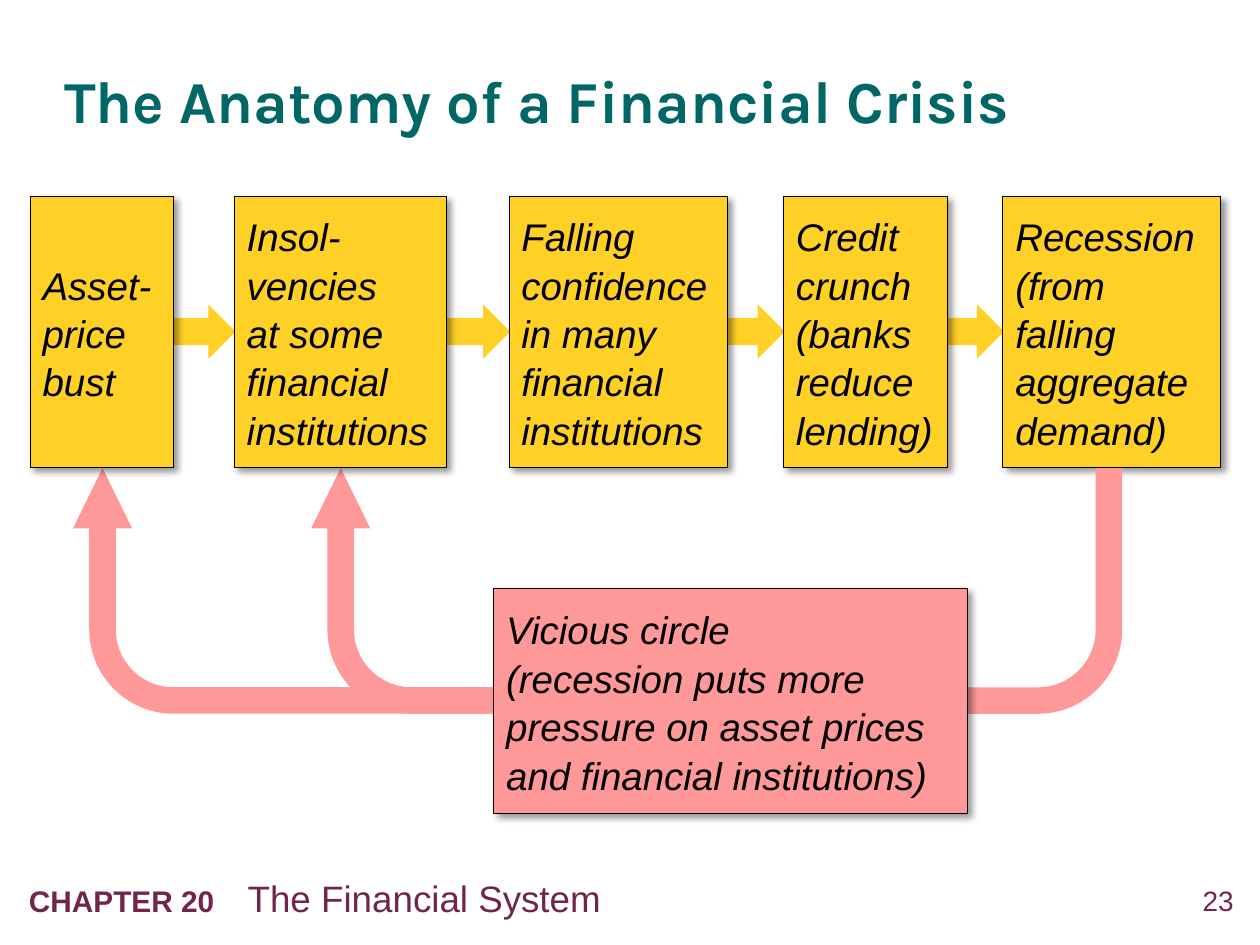
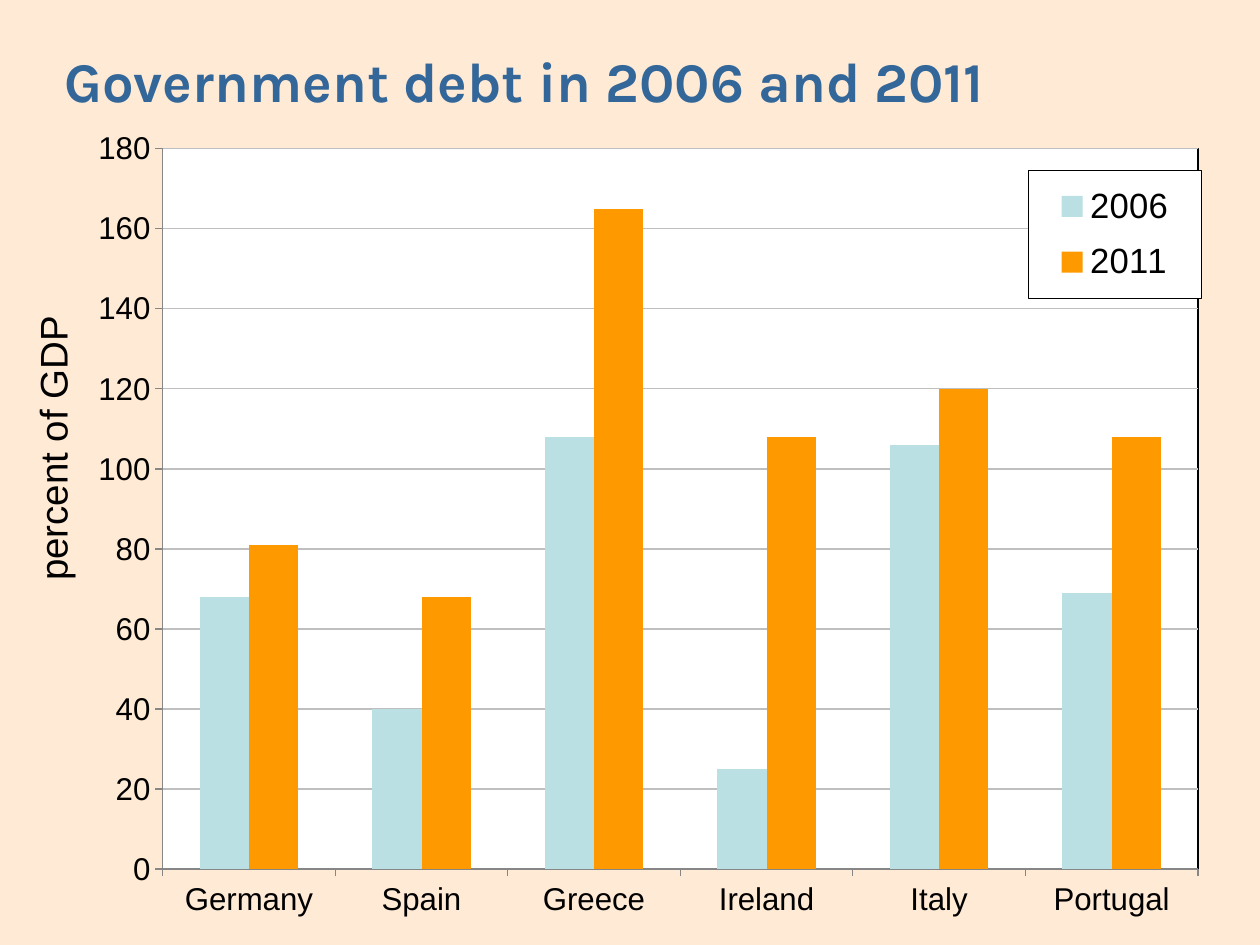
from pptx import Presentation
from pptx.chart.data import CategoryChartData
from pptx.dml.color import RGBColor
from pptx.enum.chart import XL_CHART_TYPE as ChartType, XL_LEGEND_POSITION as LegendPos
from pptx.enum.chart import XL_TICK_MARK as TickMark
from pptx.enum.shapes import MSO_SHAPE as Preset
from pptx.enum.text import MSO_ANCHOR as Anchor, PP_ALIGN as Align
from pptx.oxml import parse_xml
from pptx.oxml.ns import nsdecls, qn
from pptx.util import Pt

COLORS = {
    "white": "FFFFFF", "black": "000000", "peach": "FFEAD5",
    "teal": "006666", "blue": "336699", "plum": "71254B",
    "yellow": "FFD025", "pink": "FF9999",
    "debt_2006": "BBE0E3", "debt_2011": "FF9900",
    "grid": "BFBFBF", "axis": "868686",
}
BODY_FONT, TITLE_FONT = "Arial", "Karla"
STAGE_TOP, STAGE_HEIGHT = 112.3, 154.8
STAGES = [
    ("Asset-price bust", 17.3, 82.1),
    ("Insol-vencies\vat some financial institutions", 133.9, 121),
    ("Falling confidence in many financial institutions", 290.9, 124.6),
    ("Credit crunch (banks reduce lending)", 447.8, 93.6),
    ("Recession (from falling aggregate demand)", 573.1, 124.6),
]
STEP_WIDTH, STEP_HEIGHT = 47.5, 31
COUNTRIES = ["Germany", "Spain", "Greece", "Ireland", "Italy", "Portugal"]
DEBT = {"2006": [68, 40, 108, 25, 106, 69], "2011": [81, 68, 165, 108, 120, 108]}


def rgb(color):
    """Return the named colour."""
    return RGBColor.from_string(COLORS[color])


def style_font(font, size, color="black", name=BODY_FONT, bold=False, italic=False):
    """Format a run or chart font."""
    font.size, font.name = Pt(size), name
    font.bold, font.italic = bold, italic
    font.color.rgb = rgb(color)


def add_slide(deck, background):
    """Add a blank slide with a plain background."""
    slide = deck.slides.add_slide(deck.slide_layouts[6])
    slide.background.fill.solid()
    slide.background.fill.fore_color.rgb = rgb(background)
    return slide


def add_label(slide, text, box, size, color, inset=True, **font):
    """Add a one-paragraph text box and return its frame."""
    frame = slide.shapes.add_textbox(*map(Pt, box)).text_frame
    frame.word_wrap = True
    if not inset:
        frame.margin_left = frame.margin_right = 0
        frame.margin_top = frame.margin_bottom = 0
    frame.text = text
    style_font(frame.paragraphs[0].runs[0].font, size, color, **font)
    return frame


def add_title(slide, text, top, height, size, color):
    """Add the slide title."""
    frame = add_label(slide, text, (36.7, top, 649.4, height), size, color,
                      inset=False, name=TITLE_FONT, bold=True)
    frame.vertical_anchor = Anchor.MIDDLE
    frame.paragraphs[0].line_spacing = 1.05


def add_footer(slide, chapter, topic, number):
    """Add the page number and the chapter line."""
    page = add_label(slide, number, (665.3, 504.7, 39.6, 23), 16, "plum", inset=False)
    page.paragraphs[0].alignment = Align.RIGHT
    footer = add_label(slide, f"{chapter}\t", (9.4, 496.8, 589, 32.4), 17, "plum", bold=True)
    line = footer.paragraphs[0]
    topic_run = line.add_run()
    topic_run.text = topic
    style_font(topic_run.font, 21, "plum")
    line._p.get_or_add_pPr().append(parse_xml(
        f'<a:tabLst {nsdecls("a")}><a:tab pos="{Pt(125)}" algn="l"/></a:tabLst>'))


def add_flat_shape(slide, preset, box, color):
    """Add a filled shape without outline or shadow."""
    shape = slide.shapes.add_shape(preset, *map(Pt, box))
    shape.shadow.inherit = False
    shape.fill.solid()
    shape.fill.fore_color.rgb = rgb(color)
    shape.line.fill.background()
    return shape


def add_box(slide, text, box, color):
    """Add an outlined box with a soft shadow and italic text."""
    panel = add_flat_shape(slide, Preset.RECTANGLE, box, color)
    panel.line.color.rgb = rgb("black")
    panel.line.width = Pt(0.5)
    panel.element.spPr.find(qn("a:effectLst")).append(parse_xml(
        f'<a:outerShdw {nsdecls("a")} blurRad="{Pt(4)}" dist="{Pt(3)}" dir="2700000" '
        f'algn="tl" rotWithShape="0"><a:srgbClr val="{COLORS["black"]}">'
        '<a:alpha val="40000"/></a:srgbClr></a:outerShdw>'))
    frame = panel.text_frame
    frame.word_wrap = True
    frame.vertical_anchor = Anchor.MIDDLE
    frame.text = text
    line = frame.paragraphs[0]
    line.alignment, line.line_spacing = Align.LEFT, 1.05
    for run in line.runs:
        style_font(run.font, 22, italic=True)


def add_feedback_arrow(slide, left, top, length, head=0.245, flipped=False):
    """Add a bent band that turns upward, with an optional head."""
    arrow = add_flat_shape(slide, Preset.BENT_ARROW, (left, top, 140.4, length), "pink")
    for index, value in enumerate((0.108, 0.12, head, 0.343)):
        arrow.adjustments[index] = value
    arrow.rotation = 270
    if flipped:
        arrow.element.spPr.find(qn("a:xfrm")).set("flipV", "1")


def manual_layout(x, y, width, height, target=""):
    """Return a chart layout in fractions of the chart area."""
    modes = "".join(f'<c:{side}Mode val="edge"/>' for side in "xy")
    sizes = "".join(f'<c:{key} val="{value}"/>'
                    for key, value in zip("xywh", (x, y, width, height)))
    return parse_xml(f'<c:layout {nsdecls("c")}><c:manualLayout>{target}{modes}{sizes}'
                     '</c:manualLayout></c:layout>')


def chart_frame():
    """Return white fill and a thin black outline for a chart part."""
    return parse_xml(
        f'<c:spPr {nsdecls("c", "a")}>'
        f'<a:solidFill><a:srgbClr val="{COLORS["white"]}"/></a:solidFill>'
        f'<a:ln w="{Pt(0.75)}"><a:solidFill><a:srgbClr val="{COLORS["black"]}"/>'
        '</a:solidFill></a:ln></c:spPr>')


def style_axis(axis):
    """Format the labels, ticks and line of an axis."""
    style_font(axis.tick_labels.font, 18)
    axis.major_tick_mark, axis.minor_tick_mark = TickMark.OUTSIDE, TickMark.NONE
    axis.format.line.color.rgb = rgb("axis")
    axis.format.line.width = Pt(0.75)


def frame_plot(chart):
    """Place and frame the plot area."""
    plot_area = next(chart.element.iter(qn("c:plotArea")))
    for layout in plot_area.findall(qn("c:layout")):
        plot_area.remove(layout)
    plot_area.insert(0, manual_layout(0.047, 0.022, 0.917, 0.902,
                                      '<c:layoutTarget val="inner"/>'))
    plot_area.append(chart_frame())


def add_legend(chart):
    """Add a framed legend over the upper right of the plot."""
    chart.has_legend = True
    chart.legend.position = LegendPos.RIGHT
    chart.legend.include_in_layout = False
    style_font(chart.legend.font, 20)
    legend = next(chart.element.iter(qn("c:legend")))
    for layout in legend.findall(qn("c:layout")):
        legend.remove(layout)
    overlay = legend.find(qn("c:overlay"))
    overlay.addprevious(manual_layout(0.814, 0.049, 0.153, 0.16))
    overlay.addnext(chart_frame())


def add_debt_chart(slide):
    """Add the clustered columns of government debt."""
    data = CategoryChartData(number_format="0")
    data.categories = COUNTRIES
    for year, shares in DEBT.items():
        data.add_series(year, shares)
    chart = slide.shapes.add_chart(ChartType.COLUMN_CLUSTERED, Pt(56.2), Pt(74.9),
                                   Pt(651.6), Pt(456.5), data).chart
    chart.has_title = False
    style_font(chart.font, 10)
    columns = chart.plots[0]
    columns.gap_width, columns.overlap, columns.vary_by_categories = 150, 0, False
    for series in columns.series:
        series.format.fill.solid()
        series.format.fill.fore_color.rgb = rgb(f"debt_{series.name}")
    style_axis(chart.category_axis)
    percent = chart.value_axis
    style_axis(percent)
    percent.minimum_scale, percent.maximum_scale, percent.major_unit = 0, 180, 20
    percent.tick_labels.number_format = "0"
    percent.tick_labels.number_format_is_linked = False
    percent.major_gridlines.format.line.color.rgb = rgb("grid")
    percent.major_gridlines.format.line.width = Pt(0.75)
    frame_plot(chart)
    add_legend(chart)


def build_crisis_slide(deck):
    """Build the chain of events in a financial crisis."""
    slide = add_slide(deck, "white")
    add_footer(slide, "CHAPTER 20", "The Financial System", "23")
    add_title(slide, "The Anatomy of a Financial Crisis", 18.7, 74.2, 34, "teal")
    for left in (104.4, 240.5):
        add_feedback_arrow(slide, left, 204.8, 265.7)
    for _, next_left, _ in STAGES[1:]:
        add_flat_shape(slide, Preset.RIGHT_ARROW,
                       (next_left - STEP_WIDTH + 0.7, 174, STEP_WIDTH, STEP_HEIGHT), "yellow")
    for text, left, width in STAGES:
        add_box(slide, text, (left, STAGE_TOP, width, STAGE_HEIGHT), "yellow")
    add_feedback_arrow(slide, 486, 243.4, 188.6, head=0, flipped=True)
    add_box(slide, "Vicious circle\v(recession puts more pressure on asset prices "
            "and financial institutions)", (282.2, 336.2, 270.7, 128.9), "pink")


def build_debt_slide(deck):
    """Build the comparison of government debt."""
    slide = add_slide(deck, "peach")
    add_title(slide, "Government debt in 2006 and 2011", 10.8, 67.7, 32, "blue")
    add_debt_chart(slide)
    caption = add_label(slide, "percent of GDP", (9.4, 172.1, 41, 167), 22, "black")
    caption.vertical_anchor = Anchor.MIDDLE
    caption._txBody.find(qn("a:bodyPr")).set("vert", "vert270")


def main():
    """Build and save the presentation."""
    deck = Presentation()
    deck.slide_width, deck.slide_height = Pt(720), Pt(540)
    build_crisis_slide(deck)
    build_debt_slide(deck)
    deck.save("out.pptx")


if __name__ == "__main__":
    main()
